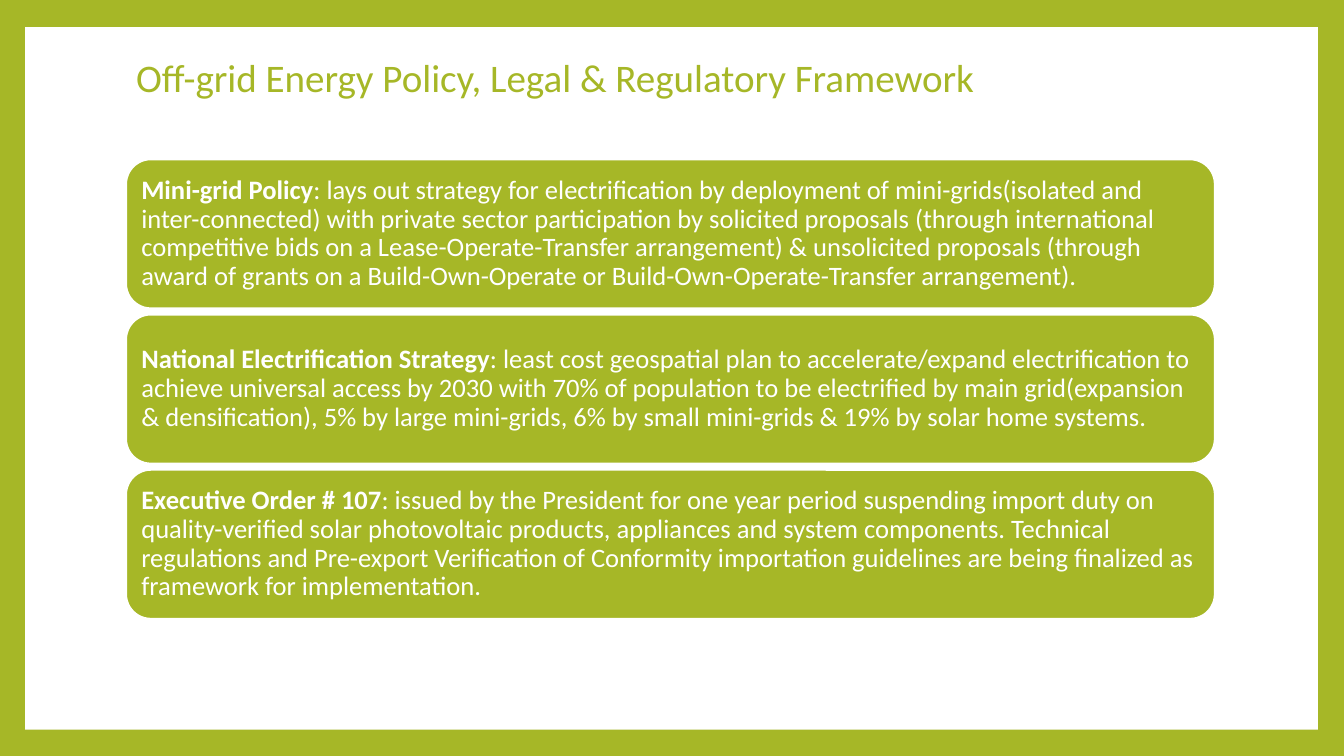
import dataclasses

import pptx
import pptx.dml.color
import pptx.enum.shapes
import pptx.enum.text
import pptx.util

PX = 9144
GREEN = "A6B727"
WHITE = "FFFFFF"
FONT = "Calibri"
LEFT, WIDTH = 125, 1080
TOP, HEIGHT, PITCH = 158, 148, 154
SHAPE = pptx.enum.shapes.MSO_SHAPE
ANCHOR = pptx.enum.text.MSO_ANCHOR
ALIGN = pptx.enum.text.PP_ALIGN


@dataclasses.dataclass
class Card:
    head: str
    body: str


CARDS = [
    Card(
        "Mini-grid Policy",
        ": lays out strategy for electrification by deployment of mini-grids(isolated and "
        "inter-connected) with private sector participation by solicited proposals (through "
        "international competitive bids on a Lease-Operate-Transfer arrangement) & unsolicited "
        "proposals (through award of grants on a Build-Own-Operate or "
        "Build-Own-Operate-Transfer arrangement).",
    ),
    Card(
        "National Electrification Strategy",
        ": least cost geospatial plan to accelerate/expand electrification to achieve universal "
        "access by 2030 with 70% of population to be electrified by main grid(expansion & "
        "densification), 5% by large mini-grids, 6% by small mini-grids & 19% by solar home "
        "systems.",
    ),
    Card(
        "Executive Order # 107",
        ": issued by the President for one year period suspending import duty on "
        "quality-verified solar photovoltaic products, appliances and system components. "
        "Technical regulations and Pre-export Verification of Conformity importation "
        "guidelines are being finalized as framework for implementation.",
    ),
]


def px(count: int) -> int:
    return pptx.util.Emu(count * PX)


def paint(target, color: str) -> None:
    target.solid()
    target.fore_color.rgb = pptx.dml.color.RGBColor.from_string(color)


def style(para, size: float, color: str) -> None:
    para.alignment = ALIGN.LEFT
    para.line_spacing = 0.9
    para.font.name = FONT
    para.font.size = pptx.util.Pt(size)
    paint(para.font.fill, color)


def add_box(slide, kind, left: int, top: int, width: int, height: int, color: str):
    box = slide.shapes.add_shape(kind, px(left), px(top), px(width), px(height))
    box.shadow.inherit = False
    paint(box.fill, color)
    box.line.fill.background()
    return box


def add_title(slide, text: str) -> None:
    title = slide.shapes.title
    title.left, title.top = px(LEFT), px(58)
    title.width, title.height = px(WIDTH), px(59)
    frame = title.text_frame
    frame.text = text
    frame.word_wrap = True
    frame.auto_size = pptx.enum.text.MSO_AUTO_SIZE.NONE
    frame.vertical_anchor = ANCHOR.TOP
    frame.margin_top = frame.margin_bottom = 0
    style(frame.paragraphs[0], 27.9, GREEN)


def add_card(slide, card: Card, top: int) -> None:
    box = add_box(slide, SHAPE.ROUNDED_RECTANGLE, LEFT, top, WIDTH, HEIGHT, GREEN)
    paint(box.line.fill, WHITE)
    box.line.width = pptx.util.Pt(1.5)
    frame = box.text_frame
    frame.word_wrap = True
    frame.vertical_anchor = ANCHOR.MIDDLE
    frame.margin_left = frame.margin_right = px(8)
    frame.margin_top = frame.margin_bottom = px(8)
    para = frame.paragraphs[0]
    style(para, 19, WHITE)
    head = para.add_run()
    head.text = card.head
    head.font.bold = True
    para.add_run().text = card.body


def main() -> None:
    deck = pptx.Presentation()
    deck.slide_width, deck.slide_height = px(1333), px(750)
    slide = deck.slides.add_slide(deck.slide_layouts.get_by_name("Title Only"))
    paint(slide.background.fill, GREEN)
    panel = add_box(slide, SHAPE.RECTANGLE, 25, 27, 1282, 697, WHITE)
    slide.shapes.title.element.addprevious(panel.element)
    add_title(slide, "Off-grid Energy Policy, Legal & Regulatory Framework")
    for row, card in enumerate(CARDS):
        add_card(slide, card, TOP + row * PITCH)
    deck.save("out.pptx")


if __name__ == "__main__":
    main()
